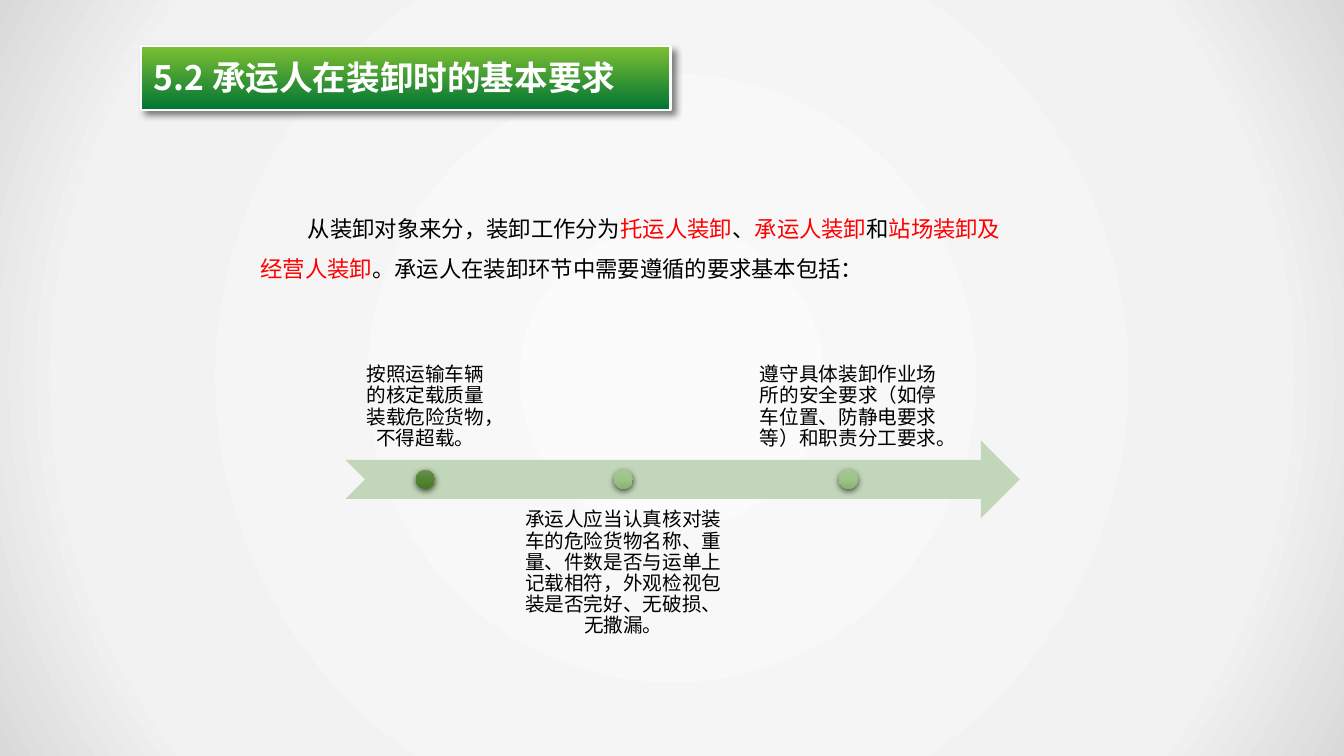
from lxml import etree
from pptx import Presentation
from pptx.dml.color import RGBColor
from pptx.enum.shapes import MSO_SHAPE
from pptx.enum.text import MSO_ANCHOR, PP_ALIGN
from pptx.oxml import parse_xml
from pptx.oxml.ns import qn
from pptx.util import Cm, Pt

RECTANGLE, OVAL = MSO_SHAPE.RECTANGLE, MSO_SHAPE.OVAL
NOTCHED_ARROW = MSO_SHAPE.NOTCHED_RIGHT_ARROW
TOP, BOTTOM = MSO_ANCHOR.TOP, MSO_ANCHOR.BOTTOM
CENTER = PP_ALIGN.CENTER
FONT = "Noto Sans CJK SC"
NS = 'xmlns:a="http://schemas.openxmlformats.org/drawingml/2006/main"'
COLORS = {
    "white": "FFFFFF", "black": "000000", "red": "FF0000",
    "frame": "FEFFFF", "arrow": "C2D7B9",
    "center": "FBFBFB", "middle": "F2F2F2", "edge": "D9D9D9",
    "lime": "7CBF33", "forest": "007434",
    "dark_top": "6A8F57", "dark_mid": "528431", "dark_low": "487828",
    "pale_top": "A7C897", "pale_mid": "9BC486", "pale_low": "88B174",
}
VERTICAL = '<a:lin ang="5400000" scaled="0"/>'
RADIAL = ('<a:path path="circle"><a:fillToRect l="50000" t="50000" '
          'r="50000" b="50000"/></a:path>')


def add_figure(kind, box, stops, direction=VERTICAL, shadow=None):
    """Draw a borderless shape; stops are (percent, colour name), shadow is
    (opacity percent, blur pt, distance pt, angle)."""
    figure = slide.shapes.add_shape(kind, *map(Cm, box))
    figure.line.fill.background()
    figure.shadow.inherit = False
    properties = figure.element.spPr
    if len(stops) == 1:
        figure.fill.solid()
        figure.fill.fore_color.rgb = RGBColor.from_string(COLORS[stops[0][1]])
    else:
        figure.fill.gradient()
        marks = "".join(
            f'<a:gs pos="{percent * 1000}"><a:srgbClr val="{COLORS[name]}"/></a:gs>'
            for percent, name in stops)
        gradient = parse_xml(f'<a:gradFill {NS} rotWithShape="1">'
                             f'<a:gsLst>{marks}</a:gsLst>{direction}</a:gradFill>')
        properties.replace(properties.find(qn("a:gradFill")), gradient)
    if shadow:
        opacity, blur, distance, angle = shadow
        outer = etree.SubElement(
            properties.find(qn("a:effectLst")), qn("a:outerShdw"),
            blurRad=str(Pt(blur)), dist=str(Pt(distance)),
            dir=str(angle * 60000), algn="ctr", rotWithShape="0")
        tint = etree.SubElement(outer, qn("a:srgbClr"), val=COLORS["black"])
        etree.SubElement(tint, qn("a:alpha"), val=str(opacity * 1000))
    return figure


def add_text(box, runs, size, bold=False, anchor=TOP, inset=None):
    """Add a one-paragraph text box from (text, colour name) runs."""
    frame = slide.shapes.add_textbox(*map(Cm, box)).text_frame
    frame.word_wrap = True
    frame.vertical_anchor = anchor
    if inset is not None:
        frame.margin_left = frame.margin_right = Cm(inset)
        frame.margin_top = frame.margin_bottom = Cm(inset)
    paragraph = frame.paragraphs[0]
    for text, color in runs:
        run = paragraph.add_run()
        run.text = text
        run.font.size, run.font.bold, run.font.name = Pt(size), bold, FONT
        run.font.color.rgb = RGBColor.from_string(COLORS[color])
        etree.SubElement(run.font._element, qn("a:ea"), typeface=FONT)
    return paragraph


prs = Presentation()
prs.slide_width, prs.slide_height = Cm(33.87), Cm(19.05)
slide = prs.slides.add_slide(prs.slide_layouts[6])

add_figure(RECTANGLE, (0, 0, 33.87, 19.05),
           [(0, "center"), (79, "middle"), (100, "edge")], RADIAL)

# Heading
banner = add_figure(RECTANGLE, (3.56, 1.17, 13.34, 1.6),
                    [(0, "lime"), (100, "forest")], shadow=(50, 5, 4.2, 45))
banner.line.color.rgb = RGBColor.from_string(COLORS["frame"])
banner.line.width = Pt(1.5)
add_text((3.63, 1.32, 12.5, 1.3),
         [("5.2 承运人在装卸时的基本要求", "white")], 24, bold=True)

# Introduction
intro = add_text((6.32, 4.95, 19.61, 2.31), [
    ("从装卸对象来分，装卸工作分为", "black"),
    ("托运人装卸", "red"),
    ("、", "black"),
    ("承运人装卸", "red"),
    ("和", "black"),
    ("站场装卸及经营人装卸", "red"),
    ("。承运人在装卸环节中需要遵循的要求基本包括：", "black"),
], 16)
intro.line_spacing = 1.5
intro._p.get_or_add_pPr().set("indent", str(Cm(1.19)))

# Timeline: requirements alternate above and below the arrow
add_figure(NOTCHED_ARROW, (8.71, 11.1, 16.99, 1.96), [(0, "arrow")])
ABOVE, BELOW = (9.65, BOTTOM), (12.57, TOP)
DOT, AXIS = 0.48, 12.08
requirements = [
    (10.72, 3.99, ABOVE, "dark", "按照运输车辆的核定载质量装载危险货物，不得超载。"),
    (15.71, 5.72, BELOW, "pale",
     "承运人应当认真核对装车的危险货物名称、重量、件数是否与运单上记载相符，"
     "外观检视包装是否完好、无破损、无撒漏。"),
    (21.38, 5.28, ABOVE, "pale",
     "遵守具体装卸作业场所的安全要求（如停车位置、防静电要求等）和职责分工要求。"),
]
for middle, width, (top, anchor), shade, wording in requirements:
    requirement = add_text((middle - width / 2, top, width, 1.96),
                           [(wording, "black")], 14, anchor=anchor, inset=0.28)
    requirement.alignment = CENTER
    requirement.line_spacing = 0.9
    add_figure(OVAL, (middle - DOT / 2, AXIS - DOT / 2, DOT, DOT),
               [(0, f"{shade}_top"), (50, f"{shade}_mid"), (100, f"{shade}_low")],
               shadow=(63, 4.5, 1.5, 90))

prs.save("out.pptx")
